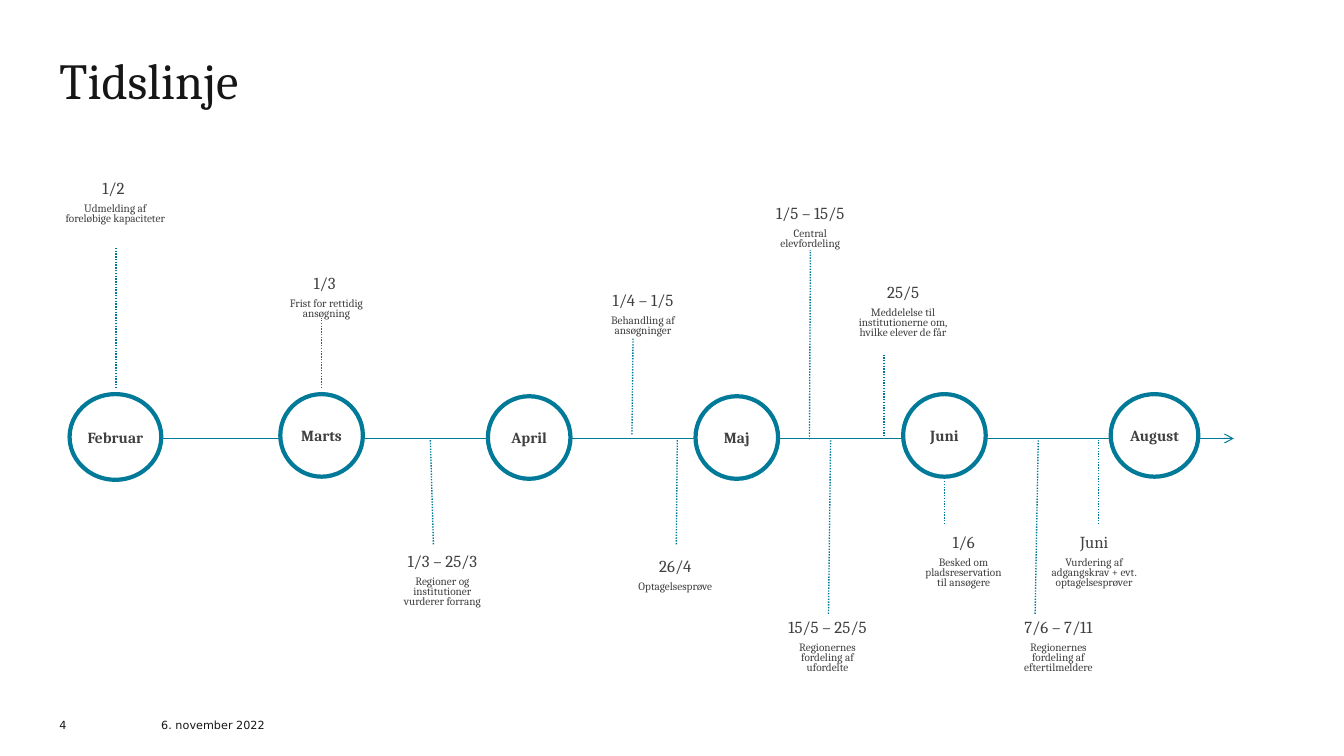
import pptx
import pptx.util
import pptx.dml.color
import pptx.enum.dml
import pptx.enum.shapes
import pptx.enum.text
import pptx.oxml
import pptx.oxml.ns

Pt = pptx.util.Pt
ANCHOR = pptx.enum.text.MSO_ANCHOR
CENTER = pptx.enum.text.PP_ALIGN.CENTER
COLORS = {"ink": "161616", "label": "404042", "teal": "007A98", "white": "FFFFFF"}
SERIF, SANS = "Cambria", "DejaVu Sans"
AXIS_Y = 313.2

# name, left, top, width, height
MONTHS = [
    ("Februar", 49.7, 281.5, 65.5, 61.2),
    ("Marts", 200.2, 281.5, 59, 59),
    ("April", 348.5, 283, 59, 59),
    ("Maj", 496.8, 283, 59, 59),
    ("Juni", 645.1, 281.5, 59, 59),
    ("August", 793.4, 281.5, 62.6, 59),
]

# date, description, (left, top, width, height), stem (x1, y1, x2, y2)
EVENTS = [
    ("1/2 ", "Udmelding af foreløbige kapaciteter",
     (41, 130.3, 82.8, 37.4), (82.8, 277.2, 82.8, 177.1)),
    ("1/3 ", "Frist for rettidig ansøgning",
     (195.8, 198, 74.9, 30.2), (229.7, 277.2, 229.7, 226.8)),
    ("1/3 – 25/3", "Regioner og institutioner vurderer forrang",
     (278.6, 396.7, 74.9, 37.4), (309.6, 388.8, 307.4, 313.9)),
    ("1/4 – 1/5", "Behandling af ansøgninger",
     (421.9, 210.2, 74.9, 30.2), (451.4, 310.3, 452.2, 241.9)),
    ("26/4", "Optagelsesprøve",
     (445, 400.3, 74.9, 23), (483.1, 388.8, 483.8, 313.9)),
    ("1/5 – 15/5", "Central elevfordeling",
     (541.4, 148.3, 74.9, 30.2), (578.2, 313.9, 578.9, 178.6)),
    ("15/5 – 25/5", "Regionernes fordeling af ufordelte",
     (553.7, 443.5, 74.9, 37.4), (591.8, 438.5, 593.3, 314.6)),
    ("25/5", "Meddelelse til institutionerne om, hvilke elever de får",
     (607.7, 204.5, 74.9, 44.6), (631.4, 311.8, 631.4, 252.7)),
    ("1/6", "Besked om pladsreservation til ansøgere",
     (650.9, 383, 74.9, 37.4), (674.6, 374.4, 674.6, 343.4)),
    ("7/6 – 7/11", "Regionernes fordeling af eftertilmeldere",
     (718.6, 443.5, 74.9, 37.4), (739.4, 438.5, 741.6, 314.6)),
    ("Juni", "Vurdering af adgangskrav + evt. optagelsesprøver",
     (738, 383, 87.1, 37.4), (784.8, 374.4, 784.8, 314.6)),
]


def rgb(name):
    return pptx.dml.color.RGBColor.from_string(COLORS[name])


def set_font(p, size, color, name=SERIF, bold=False):
    p.font.size = Pt(size)
    p.font.name = name
    p.font.bold = bold
    p.font.color.rgb = rgb(color)


def set_frame(tf, side=0, vertical=0, anchor=ANCHOR.TOP):
    tf.margin_left = tf.margin_right = Pt(side)
    tf.margin_top = tf.margin_bottom = Pt(vertical)
    tf.vertical_anchor = anchor
    tf.word_wrap = True


def add_title(s, text):
    sp = s.shapes.title
    sp.left, sp.top, sp.width, sp.height = Pt(42.5), Pt(42.5), Pt(729.4), Pt(73.4)
    tf = sp.text_frame
    set_frame(tf)
    tf.auto_size = pptx.enum.text.MSO_AUTO_SIZE.NONE
    p = tf.paragraphs[0]
    p.text = text
    p.alignment = pptx.enum.text.PP_ALIGN.LEFT
    p.line_spacing = 0.83
    set_font(p, 36, "ink")


def add_footer(s, text, left, width):
    tf = s.shapes.add_textbox(Pt(left), Pt(508.3), Pt(width), Pt(14.4)).text_frame
    set_frame(tf, anchor=ANCHOR.BOTTOM)
    p = tf.paragraphs[0]
    p.text = text
    set_font(p, 8, "ink", SANS)


def add_line(s, x1, y1, x2, y2, width):
    line = s.shapes.add_connector(
        pptx.enum.shapes.MSO_CONNECTOR.STRAIGHT, Pt(x1), Pt(y1), Pt(x2), Pt(y2))
    line.line.color.rgb = rgb("teal")
    line.line.width = Pt(width)
    pptx.oxml.ns.qn("a:effectLst")
    line._element.spPr.append(pptx.oxml.parse_xml(
        f'<a:effectLst {pptx.oxml.ns.nsdecls("a")}/>'))
    return line


def add_axis(s):
    line = add_line(s, 85.7, AXIS_Y, 881.3, AXIS_Y, 0.75)
    line.line._get_or_add_ln().append(pptx.oxml.parse_xml(
        f'<a:tailEnd {pptx.oxml.ns.nsdecls("a")} type="arrow"/>'))


def add_month(s, name, *box):
    sp = s.shapes.add_shape(pptx.enum.shapes.MSO_SHAPE.OVAL, *map(Pt, box))
    sp.shadow.inherit = False
    sp.fill.solid()
    sp.fill.fore_color.rgb = rgb("white")
    sp.line.color.rgb = rgb("teal")
    sp.line.width = Pt(3)
    set_frame(sp.text_frame, vertical=8.6, anchor=ANCHOR.MIDDLE)
    p = sp.text_frame.paragraphs[0]
    p.text = name
    p.alignment = CENTER
    set_font(p, 11, "label", bold=True)


def add_event(s, date, description, box, stem):
    """Add a dated label and the dotted stem that ties it to the axis."""
    add_line(s, *stem, 1).line.dash_style = pptx.enum.dml.MSO_LINE.ROUND_DOT
    tf = s.shapes.add_textbox(*map(Pt, box)).text_frame
    set_frame(tf, side=5.8)
    tf.auto_size = pptx.enum.text.MSO_AUTO_SIZE.SHAPE_TO_FIT_TEXT
    tf.text = f"{date}\n{description}"
    for p, size in zip(tf.paragraphs, (12, 8)):
        p.alignment = CENTER
        p.line_spacing = 0.75
        set_font(p, size, "label")
    tf.paragraphs[1].space_before = Pt(5)


def main():
    prs = pptx.Presentation()
    prs.slide_width, prs.slide_height = Pt(960), Pt(540)
    s = prs.slides.add_slide(prs.slide_layouts[5])
    add_title(s, "Tidslinje")
    add_footer(s, "4", 42.5, 21.6)
    add_footer(s, "6. november 2022", 115.2, 100)
    add_axis(s)
    for month in MONTHS:
        add_month(s, *month)
    for event in EVENTS:
        add_event(s, *event)
    prs.save("out.pptx")


if __name__ == "__main__":
    main()
